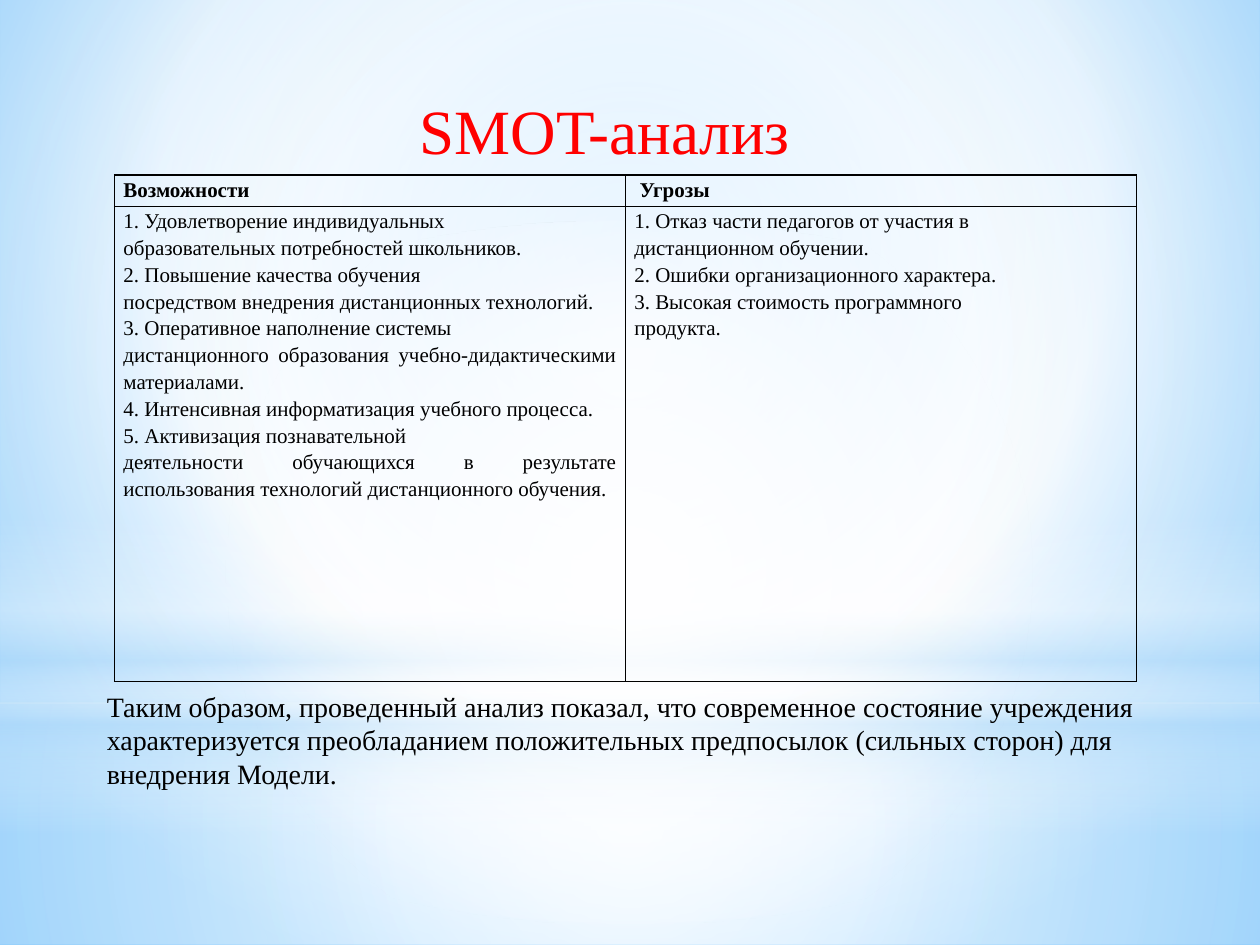
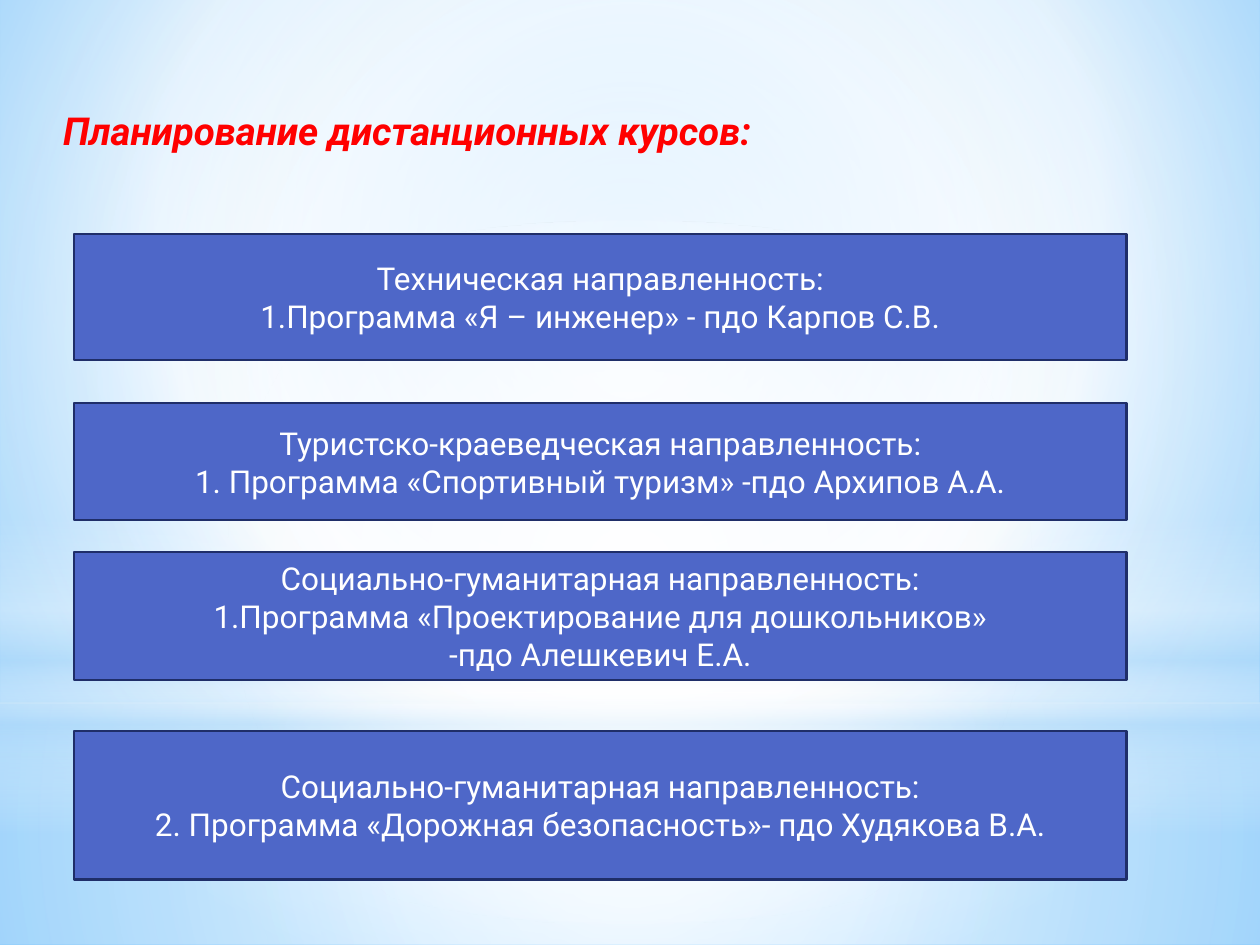
from lxml import etree
from pptx import Presentation
from pptx.dml.color import RGBColor
from pptx.enum.shapes import MSO_SHAPE
from pptx.enum.text import MSO_ANCHOR, MSO_AUTO_SIZE, PP_ALIGN
from pptx.oxml.ns import qn
from pptx.util import Inches, Pt

SERIF = "Times New Roman"
SANS = "Roboto"
RED = "FF0000"
BLACK = "000000"
WHITE = "FFFFFF"
SKY = "B4DCFA"
COURSE_FILL = "4E67C8"
COURSE_LINE = "1F2E69"
CENTRE = (50, 50, 50, 50)

HEADERS = ("Возможности", " Угрозы")
OPPORTUNITIES = (
    "1. Удовлетворение индивидуальных",
    "образовательных потребностей школьников.",
    "2. Повышение качества обучения",
    "посредством внедрения дистанционных технологий.",
    "3. Оперативное наполнение системы",
    "дистанционного образования учебно-дидактическими материалами.",
    "4. Интенсивная информатизация учебного процесса.",
    "5. Активизация познавательной",
    "деятельности обучающихся в результате использования технологий дистанционного обучения.",
)
THREATS = (
    "1. Отказ части педагогов от участия в",
    "дистанционном обучении.",
    "2. Ошибки организационного характера.",
    "3. Высокая стоимость программного",
    "продукта.",
)
CONCLUSION = (
    "Таким образом, проведенный анализ показал, что современное состояние учреждения "
    "характеризуется преобладанием положительных предпосылок (сильных сторон) для "
    "внедрения Модели."
)
COURSES = (
    (1.86, 1.0, ("Техническая направленность:",
                 "1.Программа «Я – инженер» - пдо Карпов С.В.")),
    (3.2, 0.93, ("Туристско-краеведческая направленность:",
                 "1. Программа «Спортивный туризм» -пдо Архипов А.А.")),
    (4.38, 1.02, ("Социально-гуманитарная направленность:",
                  "1.Программа «Проектирование для дошкольников»",
                  "-пдо Алешкевич Е.А.")),
    (5.8, 1.18, ("Социально-гуманитарная направленность:",
                 "2. Программа «Дорожная безопасность»- пдо Худякова В.А.")),
)


def rgb(code):
    return RGBColor.from_string(code)


def box(left, top, width, height):
    return Inches(left), Inches(top), Inches(width), Inches(height)


def write(frame, lines, size, font, color, bold=False, italic=False,
          align=PP_ALIGN.LEFT, spacing=1.0):
    for index, line in enumerate(lines):
        paragraph = frame.add_paragraph() if index else frame.paragraphs[0]
        paragraph.alignment = align
        paragraph.line_spacing = spacing
        run = paragraph.add_run()
        run.text = line
        run.font.size = Pt(size)
        run.font.name = font
        run.font.bold = bold
        run.font.italic = italic
        run.font.color.rgb = rgb(color)


def set_gradient(fill, properties, stops, focus=None):
    fill.solid()
    gradient = etree.Element(qn("a:gradFill"), rotWithShape="1")
    stop_list = etree.SubElement(gradient, qn("a:gsLst"))
    for position, color, opacity in stops:
        stop = etree.SubElement(stop_list, qn("a:gs"), pos=str(position * 1000))
        tint = etree.SubElement(stop, qn("a:srgbClr"), val=color)
        if opacity < 100:
            etree.SubElement(tint, qn("a:alpha"), val=str(opacity * 1000))
    if focus:
        circle = etree.SubElement(gradient, qn("a:path"), path="circle")
        edges = {side: str(value * 1000) for side, value in zip("ltrb", focus)}
        etree.SubElement(circle, qn("a:fillToRect"), **edges)
    else:
        etree.SubElement(gradient, qn("a:lin"), ang="5400000", scaled="0")
    properties.replace(properties.find(qn("a:solidFill")), gradient)


def add_glow(master, slide, kind, top, height, stops, focus=CENTRE):
    glow = slide.shapes.add_shape(kind, *box(0, top, 10, height))
    glow.shadow.inherit = False
    glow.line.fill.background()
    set_gradient(glow.fill, glow.element.spPr, stops, focus)
    master.element.cSld.spTree.append(glow.element)


def decorate_master(master, slide):
    backdrop = master.background.fill
    backdrop.solid()
    set_gradient(backdrop, master.element.find(".//" + qn("p:bgPr")),
                 ((0, "9ED5FF", 100), (60, WHITE, 100), (100, "5BB9FF", 100)),
                 (20, 10, 20, 60))
    add_glow(master, slide, MSO_SHAPE.RECTANGLE, 5.58, 1.92,
             ((0, WHITE, 91), (37, WHITE, 76), (100, SKY, 79)))
    add_glow(master, slide, MSO_SHAPE.RECTANGLE, 0, 5.58,
             ((0, WHITE, 89), (48, WHITE, 62), (100, SKY, 79)))
    add_glow(master, slide, MSO_SHAPE.RECTANGLE, 4.12, 2.5,
             ((0, WHITE, 0), (29, WHITE, 30), (45, SKY, 40),
              (55, WHITE, 26), (65, SKY, 60), (100, WHITE, 0)), None)
    add_glow(master, slide, MSO_SHAPE.OVAL, 1.75, 5.58,
             ((0, WHITE, 100), (56, WHITE, 0)))


def set_title(slide, text, place, **text_format):
    title = slide.shapes.title
    title.left, title.top, title.width, title.height = box(*place)
    frame = title.text_frame
    frame.auto_size = MSO_AUTO_SIZE.NONE
    frame.vertical_anchor = MSO_ANCHOR.TOP
    write(frame, [text], color=RED, **text_format)


def add_note(slide, text, place):
    frame = slide.shapes.add_textbox(*box(*place)).text_frame
    frame.word_wrap = True
    write(frame, [text], size=16, font=SERIF, color=BLACK)


def add_borders(cell):
    properties = cell._tc.get_or_add_tcPr()
    for side in ("a:lnL", "a:lnR", "a:lnT", "a:lnB"):
        border = etree.SubElement(properties, qn(side), w=str(Pt(1)))
        paint = etree.SubElement(border, qn("a:solidFill"))
        etree.SubElement(paint, qn("a:srgbClr"), val=BLACK)


def fill_cell(cell, lines, **text_format):
    add_borders(cell)
    cell.fill.background()
    cell.margin_left = cell.margin_right = Inches(0.07)
    cell.margin_top = cell.margin_bottom = 0
    write(cell.text_frame, lines, size=12, font=SERIF, color=BLACK,
          spacing=1.15, **text_format)


def add_analysis(slide):
    analysis = slide.shapes.add_table(2, 2, *box(0.91, 1.39, 8.11, 4.02)).table
    analysis.first_row = False
    analysis.horz_banding = False
    for row, height in zip(analysis.rows, (0.25, 3.77)):
        row.height = Inches(height)
    for column, (header, points) in enumerate(zip(HEADERS, (OPPORTUNITIES, THREATS))):
        fill_cell(analysis.cell(0, column), [header], bold=True)
        fill_cell(analysis.cell(1, column), points, align=PP_ALIGN.JUSTIFY)


def add_course(slide, top, height, lines):
    course = slide.shapes.add_shape(MSO_SHAPE.RECTANGLE, *box(0.59, top, 8.35, height))
    course.shadow.inherit = False
    course.fill.solid()
    course.fill.fore_color.rgb = rgb(COURSE_FILL)
    course.line.color.rgb = rgb(COURSE_LINE)
    course.line.width = Pt(1.25)
    course.text_frame.vertical_anchor = MSO_ANCHOR.MIDDLE
    write(course.text_frame, lines, size=18, font=SANS, color=WHITE,
          align=PP_ALIGN.CENTER)


def main():
    deck = Presentation()
    deck.slide_width, deck.slide_height = Inches(10), Inches(7.5)
    title_only = deck.slide_layouts[5]

    analysis_slide = deck.slides.add_slide(title_only)
    decorate_master(deck.slide_master, analysis_slide)
    set_title(analysis_slide, "SMOT-анализ", (3.03, 0.68, 3.54, 0.71),
              size=36, font=SERIF, align=PP_ALIGN.CENTER)
    add_analysis(analysis_slide)
    add_note(analysis_slide, CONCLUSION, (0.75, 5.42, 8.74, 0.91))

    courses_slide = deck.slides.add_slide(title_only)
    set_title(courses_slide, "Планирование дистанционных курсов:",
              (0.4, 0.8, 9.08, 0.5), size=22, font=SANS, bold=True, italic=True)
    for top, height, lines in COURSES:
        add_course(courses_slide, top, height, lines)

    deck.save("out.pptx")


if __name__ == "__main__":
    main()
